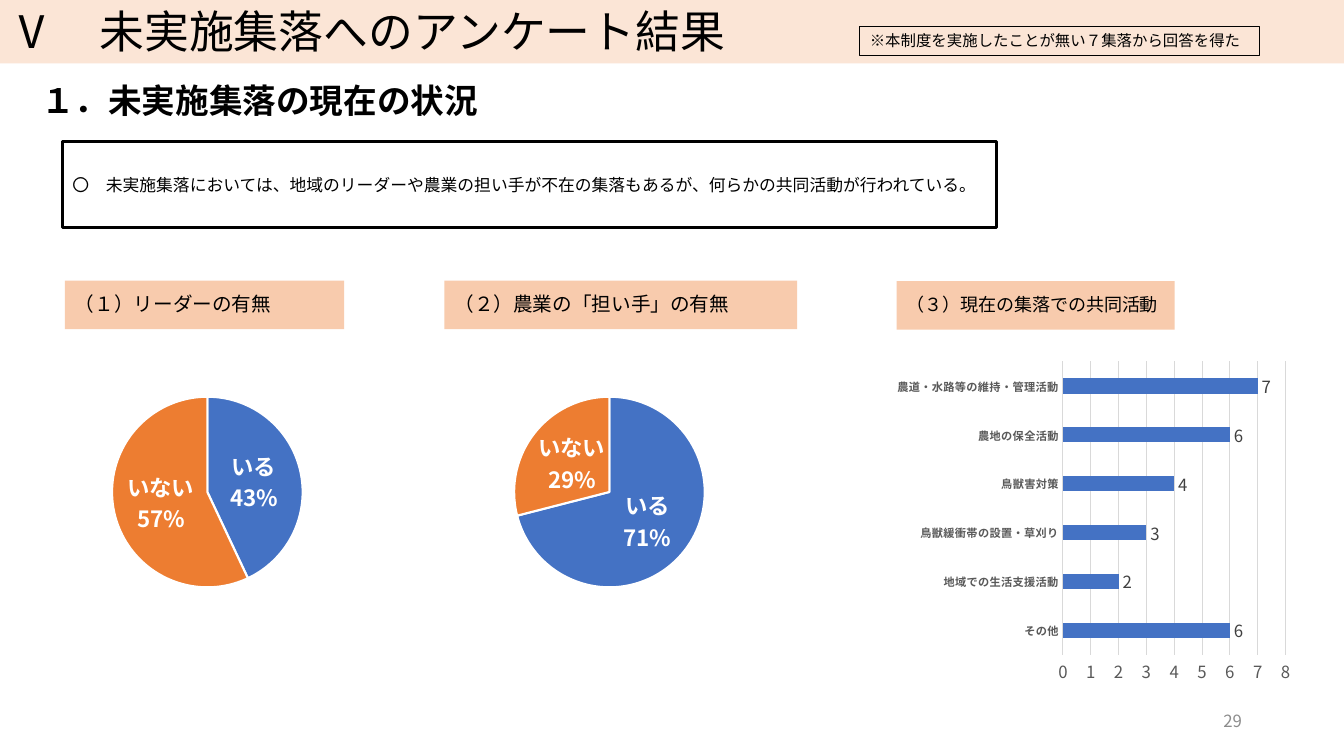
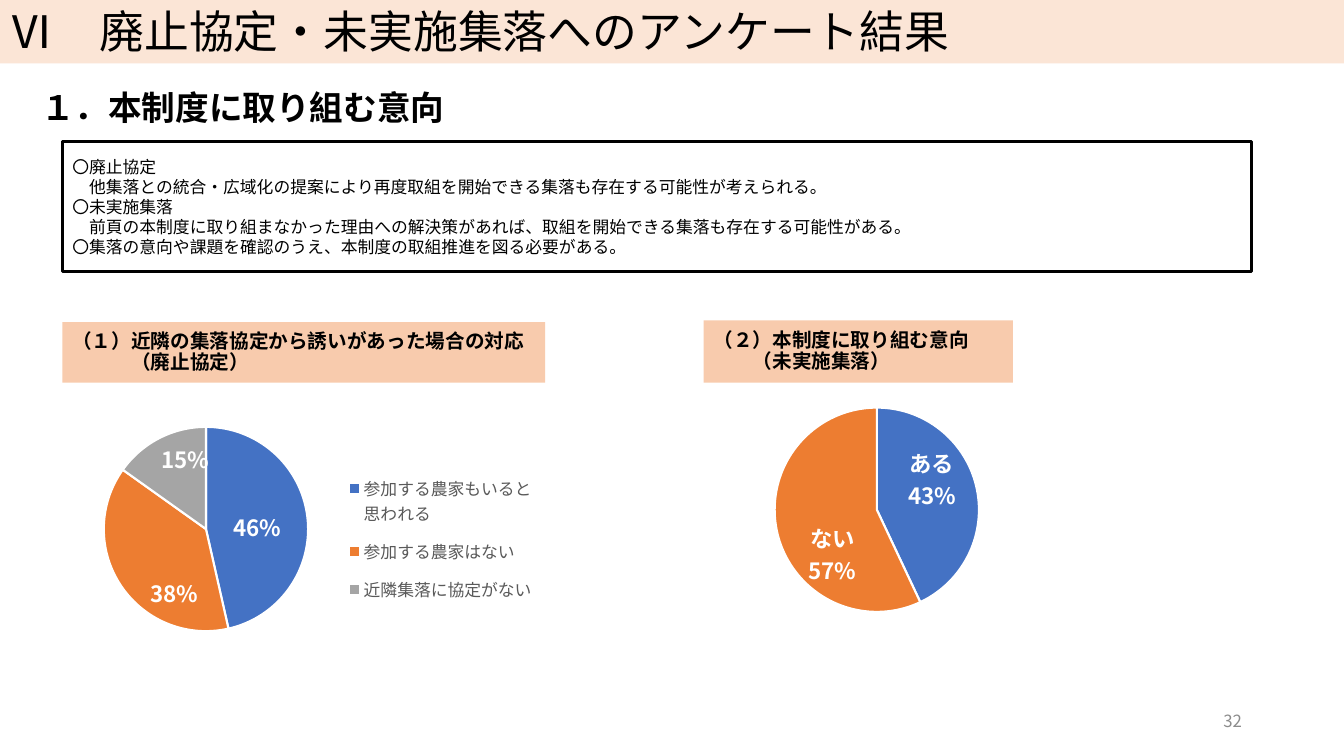
from dataclasses import dataclass
from typing import NamedTuple

from lxml import etree
from pptx import Presentation
from pptx import util as u
from pptx.chart import data as chart_data
from pptx.dml import color as dml
from pptx.enum import chart as ch
from pptx.enum import shapes, text
from pptx.oxml import ns

# Shared look
FONT = "Noto Sans CJK JP"
BLACK, WHITE = "000000", "FFFFFF"
BAND, HEADING = "FBE5D6", "F8CBAD"
GREY, VALUE_GREY, AXIS_GREY, PAGE_GREY = "595959", "404040", "D9D9D9", "8C8C8C"
SLICES = ["4472C4", "ED7D31", "A5A5A5"]
BODY_SPACING, HEADING_SPACING = 1.0, 0.9


class Box(NamedTuple):
    left: float
    top: float
    width: float
    height: float

    def points(self) -> list:
        return [u.Pt(length) for length in self]


@dataclass
class Style:
    size: float
    color: str = BLACK
    bold: bool = False
    spacing: float = BODY_SPACING
    anchor: text.MSO_ANCHOR = text.MSO_ANCHOR.MIDDLE
    align: text.PP_ALIGN = text.PP_ALIGN.LEFT


@dataclass
class Heading:
    box: Box
    lines: list
    size: float = 14
    bold: bool = False


@dataclass
class Pie:
    box: Box
    plot: Box
    answers: dict
    offsets: tuple = ()
    legend: Box | None = None


@dataclass
class Page:
    number: str
    title: str
    subtitle: str
    subtitle_top: float
    summary_box: Box
    summary: list
    headings: list
    pies: list


TITLE = Style(32, anchor=text.MSO_ANCHOR.TOP)
SUBTITLE = Style(24, bold=True, spacing=HEADING_SPACING)
SUMMARY = Style(12)
NOTE = Style(11, anchor=text.MSO_ANCHOR.TOP)
PAGE_NUMBER = Style(12, PAGE_GREY, align=text.PP_ALIGN.RIGHT)


def rgb(value: str) -> dml.RGBColor:
    return dml.RGBColor.from_string(value)


def style_font(font, size: float, color: str, bold: bool = False) -> None:
    font.size, font.bold, font.name = u.Pt(size), bold, FONT
    font.color.rgb = rgb(color)
    latin = font._rPr.find(ns.qn("a:latin"))
    east_asian = etree.Element(ns.qn("a:ea"))
    east_asian.set("typeface", FONT)
    latin.addnext(east_asian)


# Text and boxes
def write(frame, paragraphs: list, style: Style) -> None:
    """Fill a frame; a newline inside a paragraph becomes a line break."""
    frame.word_wrap = True
    frame.vertical_anchor = style.anchor
    for index, wording in enumerate(paragraphs):
        paragraph = frame.add_paragraph() if index else frame.paragraphs[0]
        paragraph.alignment = style.align
        paragraph.line_spacing = style.spacing
        for row, line in enumerate(wording.split("\n")):
            if row:
                paragraph.add_line_break()
            run = paragraph.add_run()
            run.text = line
            style_font(run.font, style.size, style.color, style.bold)


def add_label(slide, box: Box, paragraphs: list, style: Style) -> None:
    write(slide.shapes.add_textbox(*box.points()).text_frame, paragraphs, style)


def add_panel(slide, box: Box, paragraphs: list, style: Style,
              fill: str | None = None, border: float = 0) -> None:
    panel = slide.shapes.add_shape(shapes.MSO_SHAPE.RECTANGLE, *box.points())
    panel.shadow.inherit = False
    if fill:
        panel.fill.solid()
        panel.fill.fore_color.rgb = rgb(fill)
    else:
        panel.fill.background()
    if border:
        panel.line.color.rgb = rgb(BLACK)
        panel.line.width = u.Pt(border)
    else:
        panel.line.fill.background()
    write(panel.text_frame, paragraphs, style)


# Chart helpers
def chart_node(tag: str, value: str | None = None):
    node = etree.Element(ns.qn(f"c:{tag}"))
    if value is not None:
        node.set("val", value)
    return node


def manual_layout(settings: dict):
    layout = chart_node("layout")
    manual = chart_node("manualLayout")
    layout.append(manual)
    for tag, value in settings.items():
        manual.append(chart_node(tag, str(value)))
    return layout


def frame_layout(box: Box, inner: bool = False):
    target = {"layoutTarget": "inner"} if inner else {}
    return manual_layout(target | {"xMode": "edge", "yMode": "edge", "x": box.left,
                                   "y": box.top, "w": box.width, "h": box.height})


def add_chart(slide, kind, box: Box, plot: Box, answers: dict):
    data = chart_data.CategoryChartData()
    data.categories = list(answers)
    data.add_series("Series 1", list(answers.values()))
    chart = slide.shapes.add_chart(kind, *box.points(), data).chart
    chart.has_title = chart.has_legend = False
    style_font(chart.font, 10, BLACK)
    area = chart._chartSpace.find(".//" + ns.qn("c:plotArea"))
    for old in area.findall(ns.qn("c:layout")):
        area.remove(old)
    area.insert(0, frame_layout(plot, inner=True))
    return chart


def show_percent(labels_node, with_category: bool) -> None:
    shown = {"showVal": "0", "showPercent": "1",
             "showCatName": "1" if with_category else "0"}
    for tag, value in shown.items():
        labels_node.find(ns.qn(f"c:{tag}")).set("val", value)
    if with_category:
        separator = chart_node("separator")
        separator.text = "\n"
        last = labels_node.find(ns.qn("c:showBubbleSize"))
        if last is None:
            last = labels_node.find(ns.qn("c:showPercent"))
        last.addnext(separator)


def add_pie(slide, pie: Pie) -> None:
    chart = add_chart(slide, ch.XL_CHART_TYPE.PIE, pie.box, pie.plot, pie.answers)
    chart.plots[0].vary_by_categories = True
    series = chart.plots[0].series[0]
    for index, color in enumerate(SLICES[:len(pie.answers)]):
        slice_format = series.points[index].format
        slice_format.fill.solid()
        slice_format.fill.fore_color.rgb = rgb(color)
        slice_format.line.color.rgb = rgb(WHITE)
        slice_format.line.width = u.Pt(1.5)

    # Percentages, with the answer when there is no legend
    position = ch.XL_LABEL_POSITION
    labels = series.data_labels
    style_font(labels.font, 16, WHITE, True)
    labels.position = position.INSIDE_END if pie.offsets else position.CENTER
    show_percent(labels._element, pie.legend is None)
    for index, (x, y) in enumerate(pie.offsets):
        label = series.points[index].data_label
        style_font(label.font, 16, WHITE, True)
        label.position = position.CENTER
        node = labels._element.findall(ns.qn("c:dLbl"))[index]
        show_percent(node, pie.legend is None)
        node.find(ns.qn("c:idx")).addnext(manual_layout({"x": x, "y": y}))

    if pie.legend:
        chart.has_legend = True
        chart.legend.position = ch.XL_LEGEND_POSITION.RIGHT
        chart.legend.include_in_layout = False
        style_font(chart.legend.font, 12, GREY)
        legend = chart.legend._element
        for old in legend.findall(ns.qn("c:layout")):
            legend.remove(old)
        legend.find(ns.qn("c:legendPos")).addnext(frame_layout(pie.legend))


def add_activity_bars(slide, box: Box, plot: Box, activities: dict) -> None:
    chart = add_chart(slide, ch.XL_CHART_TYPE.BAR_CLUSTERED, box, plot, activities)
    bars = chart.plots[0]
    bars.gap_width, bars.vary_by_categories = 219, False
    series = bars.series[0]
    series.format.fill.solid()
    series.format.fill.fore_color.rgb = rgb(SLICES[0])
    labels = series.data_labels
    labels.show_value = True
    labels.position = ch.XL_LABEL_POSITION.OUTSIDE_END
    style_font(labels.font, 12, VALUE_GREY)

    names, counts = chart.category_axis, chart.value_axis
    for axis in (names, counts):
        axis.major_tick_mark = axis.minor_tick_mark = ch.XL_TICK_MARK.NONE
    style_font(names.tick_labels.font, 8, GREY, True)
    style_font(counts.tick_labels.font, 12, GREY)
    counts.minimum_scale, counts.maximum_scale, counts.major_unit = 0, 8, 1
    counts.has_major_gridlines = True
    counts.format.line.fill.background()
    for line in (names.format.line, counts.major_gridlines.format.line):
        line.color.rgb = rgb(AXIS_GREY)
        line.width = u.Pt(0.75)


# Content
PIE_PLOT = Box(0.35, 0.2, 0.39, 0.62)
PAGES = [
    Page("29", "Ⅴ　未実施集落へのアンケート結果", "１．未実施集落の現在の状況", 56.2,
         Box(44.6, 100.8, 667.4, 62),
         ["〇　未実施集落においては、地域のリーダーや農業の担い手が不在の集落もあるが、"
          "何らかの共同活動が行われている。"],
         [Heading(Box(46.4, 200.5, 199.5, 34.6), ["（１）リーダーの有無"]),
          Heading(Box(317.5, 200.5, 252, 34.6), ["（２）農業の「担い手」の有無"]),
          Heading(Box(640.4, 200.9, 198.7, 34.6), ["（３）現在の集落での共同活動"], 12.9)],
         [Pie(Box(-63.3, 239.5, 388, 219.6), PIE_PLOT, {"いる": 43, "いない": 57}),
          Pie(Box(223.9, 239.5, 388, 219.6), PIE_PLOT, {"いる": 71, "いない": 29})]),
    Page("32", "Ⅵ　廃止協定・未実施集落へのアンケート結果", "１．本制度に取り組む意向", 61.2,
         Box(44.6, 101.2, 849.6, 92.9),
         ["〇廃止協定",
          "　他集落との統合・広域化の提案により再度取組を開始できる集落も存在する可能性が考えられる。\n"
          "〇未実施集落\n"
          "　前頁の本制度に取り組まなかった理由への解決策があれば、"
          "取組を開始できる集落も存在する可能性がある。",
          "〇集落の意向や課題を確認のうえ、本制度の取組推進を図る必要がある。"],
         [Heading(Box(44.6, 230.2, 344.9, 43.2),
                  ["（１）近隣の集落協定から誘いがあった場合の対応", "　　　（廃止協定）"], bold=True),
          Heading(Box(502.6, 228.8, 221, 44.6),
                  ["（２）本制度に取り組む意向", "　　（未実施集落）"], bold=True)],
         [Pie(Box(470.9, 279.4, 383.8, 235.4), Box(0.21, 0.05, 0.39, 0.62),
              {"ある": 43, "ない": 57}, ((0.01, -0.06), (0.01, 0.1))),
          Pie(Box(11, 293.2, 394.6, 235.4), Box(0.15, 0.05, 0.39, 0.62),
              {"参加する農家もいると思われる": 46, "参加する農家はない": 38,
               "近隣集落に協定がない": 15},
              ((0, 0.01), (0.02, 0.11)), Box(0.6, 0.16, 0.34, 0.46))]),
]
ACTIVITIES = {"その他": 6, "地域での生活支援活動": 2, "鳥獣緩衝帯の設置・草刈り": 3,
              "鳥獣害対策": 4, "農地の保全活動": 6, "農道・水路等の維持・管理活動": 7}


def add_page(deck, page: Page):
    slide = deck.slides.add_slide(deck.slide_layouts[6])
    add_panel(slide, Box(0, -0.7, 960, 46), [page.title], TITLE, fill=BAND)
    add_label(slide, Box(22.3, page.subtitle_top, 667.4, 34.6), [page.subtitle], SUBTITLE)
    add_panel(slide, page.summary_box, page.summary, SUMMARY, border=2.25)
    for heading in page.headings:
        style = Style(heading.size, bold=heading.bold, spacing=HEADING_SPACING)
        add_panel(slide, heading.box, heading.lines, style, fill=HEADING)
    for pie in page.pies:
        add_pie(slide, pie)
    add_label(slide, Box(678.2, 500.4, 216, 28.8), [page.number], PAGE_NUMBER)
    return slide


def main() -> None:
    deck = Presentation()
    deck.slide_width, deck.slide_height = u.Pt(960), u.Pt(540)
    current_state, _ = [add_page(deck, page) for page in PAGES]
    add_panel(current_state, Box(614.2, 18.7, 285.1, 20.9),
              ["※本制度を実施したことが無い７集落から回答を得た"], NOTE, border=0.5)
    add_activity_bars(current_state, Box(603.6, 240.5, 338.4, 252.7),
                      Box(0.46, 0.07, 0.47, 0.83), ACTIVITIES)
    deck.save("out.pptx")


if __name__ == "__main__":
    main()
